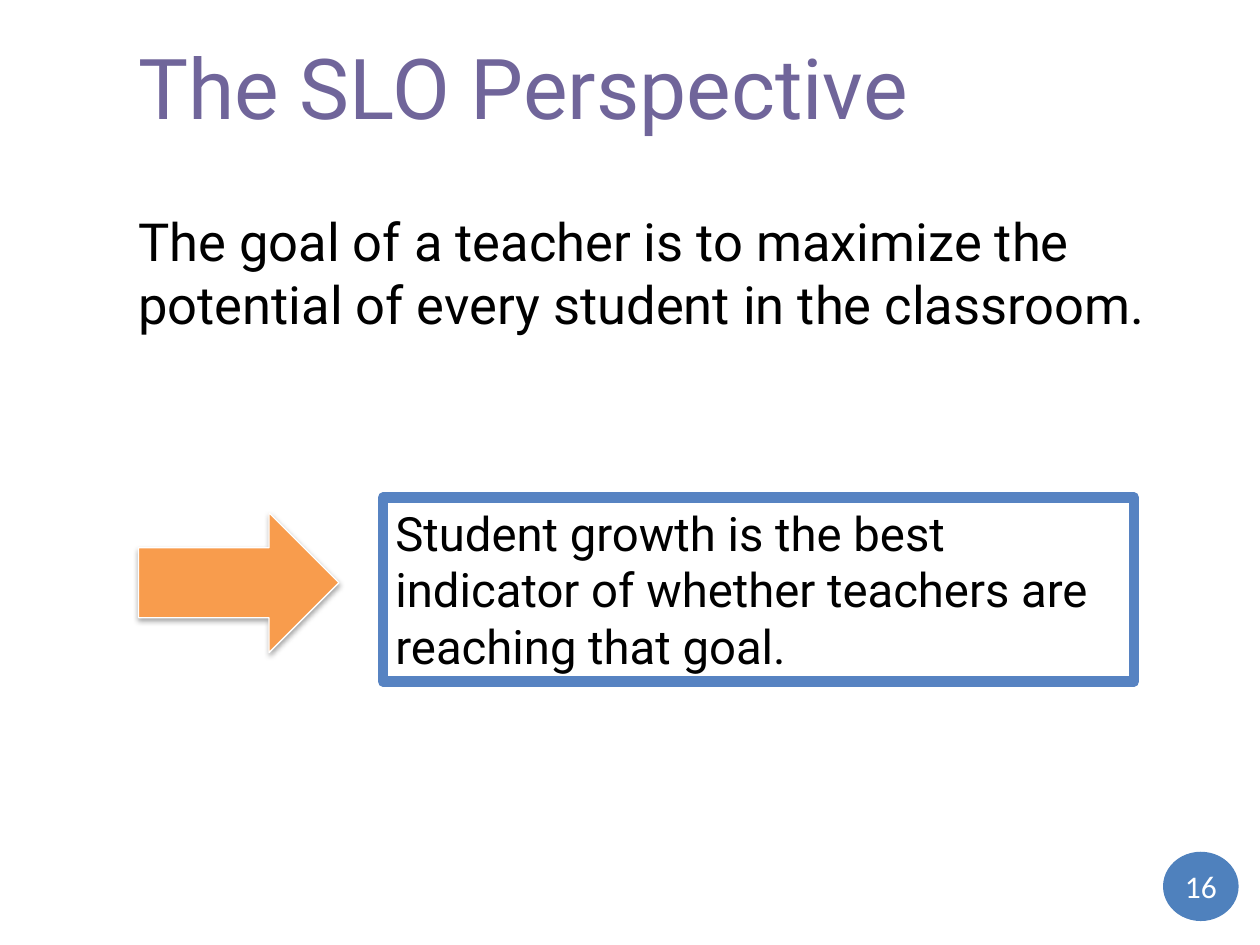
from lxml.etree import SubElement
from pptx import Presentation
from pptx.dml.color import RGBColor
from pptx.enum.shapes import MSO_SHAPE
from pptx.enum.text import MSO_ANCHOR, PP_ALIGN
from pptx.oxml.ns import qn
from pptx.util import Pt

COLOURS = {
    "title": "70659A",
    "text": "000000",
    "arrow": "F89C4D",
    "frame": "5783C2",
    "badge": "4F81BD",
    "white": "FFFFFF",
}


def colour(name):
    return RGBColor.from_string(COLOURS[name])


def write(shape, text, size, color="text", font="Roboto", align=PP_ALIGN.LEFT,
          anchor=MSO_ANCHOR.TOP, inset=(7.2, 7.2)):
    """Fill a shape with one paragraph; inset is (horizontal, vertical)."""
    frame = shape.text_frame
    frame.word_wrap = True
    frame.vertical_anchor = anchor
    frame.margin_left = frame.margin_right = Pt(inset[0])
    frame.margin_top = frame.margin_bottom = Pt(inset[1])
    para = frame.paragraphs[0]
    para.alignment = align
    span = para.add_run()
    span.text = text
    span.font.name = font
    span.font.size = Pt(size)
    span.font.color.rgb = colour(color)


class SlideBuilder:
    def __init__(self, page):
        self.page = page

    def text(self, bounds, text, **style):
        box = self.page.shapes.add_textbox(*map(Pt, bounds))
        write(box, text, **style)

    def shape(self, kind, bounds, fill=None, line=None, line_width=0.75):
        shape = self.page.shapes.add_shape(kind, *map(Pt, bounds))
        shape.shadow.inherit = False
        if fill:
            shape.fill.solid()
            shape.fill.fore_color.rgb = colour(fill)
        else:
            shape.fill.background()
        if line:
            shape.line.color.rgb = colour(line)
            shape.line.width = Pt(line_width)
        else:
            shape.line.fill.background()
        return shape

    def arrow(self, bounds):
        arrow = self.shape(MSO_SHAPE.RIGHT_ARROW, bounds, "arrow", "white")
        effects = arrow.fill._xPr.find(qn("a:effectLst"))
        shadow = SubElement(effects, qn("a:outerShdw"), blurRad=str(Pt(3.1)),
                            dist=str(Pt(1.8)), dir="5400000", rotWithShape="0")
        black = SubElement(shadow, qn("a:srgbClr"), val=COLOURS["text"])
        SubElement(black, qn("a:alpha"), val="35000")

    def framed_text(self, bounds, text, **style):
        box = self.shape(MSO_SHAPE.RECTANGLE, bounds, line="frame", line_width=6)
        write(box, text, inset=(7.2, 3.6), **style)

    def page_number(self, bounds, number):
        badge = self.shape(MSO_SHAPE.OVAL, bounds, "badge")
        write(badge, str(number), size=18, color="white", font="Calibri",
              align=PP_ALIGN.CENTER, anchor=MSO_ANCHOR.MIDDLE, inset=(0, 0))


def main():
    deck = Presentation()
    deck.slide_width, deck.slide_height = Pt(720), Pt(540)
    slide = SlideBuilder(deck.slides.add_slide(deck.slide_layouts[6]))

    slide.text((72, 21.6, 612, 63.4), "The SLO Perspective",
               size=48, color="title", anchor=MSO_ANCHOR.BOTTOM)
    slide.text((72, 112.3, 612, 362.2),
               "The goal of a teacher is to maximize the potential of every "
               "student in the classroom.", size=30)
    slide.arrow((79.2, 293, 114.5, 80))
    slide.framed_text((218.9, 284.4, 429.1, 105.1),
                      "Student growth is the best indicator of whether teachers "
                      "are reaching that goal.", size=27)
    slide.page_number((664.6, 486.7, 43.2, 39.6), 16)
    deck.save("out.pptx")


if __name__ == "__main__":
    main()
